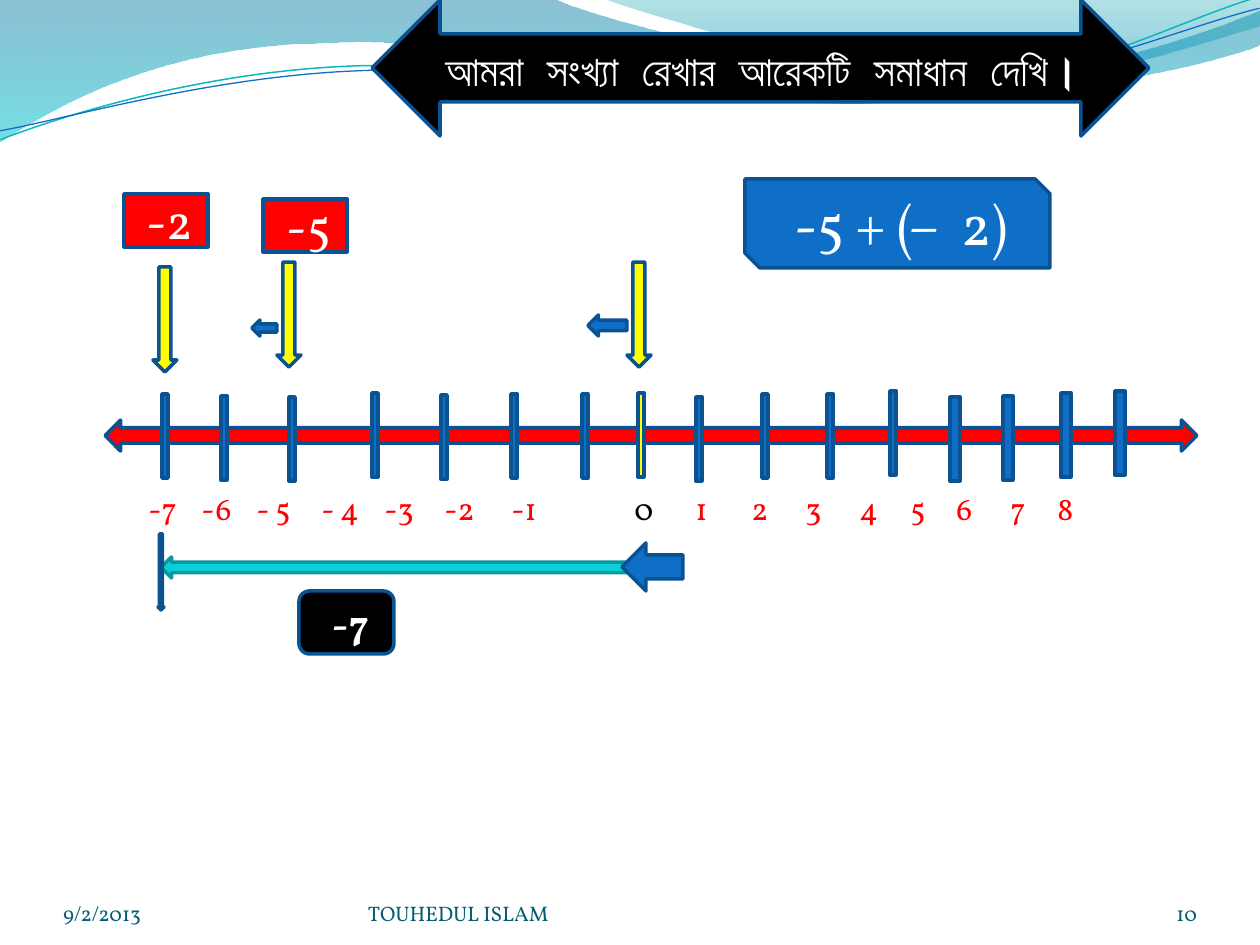
from lxml import etree
from pptx import Presentation
from pptx import util as u
from pptx.dml.color import RGBColor
from pptx.enum import shapes, text
from pptx.oxml.ns import qn

SCALE = 914400 / 126  # EMU in one px
FONT, BANGLA_FONT = "Vollkorn", "Roboto"

WHITE = RGBColor(0xFF, 0xFF, 0xFF)
BLACK = RGBColor(0, 0, 0)
RED = RGBColor(0xFF, 0, 0)
YELLOW = RGBColor(0xFF, 0xFF, 0)
BLUE = RGBColor(0x0F, 0x6F, 0xC6)
OUTLINE = RGBColor(0x0B, 0x52, 0x92)
CYAN = RGBColor(0x0B, 0xD0, 0xD9)
CYAN_OUTLINE = RGBColor(0x08, 0x9A, 0xA1)
FOOTER = RGBColor(0x04, 0x5D, 0x75)
WAVE_TEAL = RGBColor(0x0A, 0xB8, 0xBF)
WAVE_DEEP = RGBColor(0x00, 0x74, 0xA1)
WAVE_AQUA = RGBColor(0x00, 0xC6, 0xCF)
WAVE_GREEN = RGBColor(0x00, 0xA1, 0xA9)
WAVE_SKY = RGBColor(0x00, 0x8B, 0xBF)

KIND = shapes.MSO_SHAPE
ALIGN = text.PP_ALIGN
ANCHOR = text.MSO_ANCHOR


def px(value):
    return u.Emu(round(value * SCALE))


def add_run(paragraph, words, size, color, bold=None, font=FONT):
    run = paragraph.add_run()
    run.text = words
    run.font.name, run.font.size, run.font.bold = font, u.Pt(size), bold
    run.font.color.rgb = color


def add_shape(slide, kind, box, fill, line=OUTLINE):
    shape = slide.shapes.add_shape(kind, *map(px, box))
    shape.shadow.inherit = False
    shape.fill.solid()
    shape.fill.fore_color.rgb = fill
    shape.line.color.rgb = line
    shape.line.width = u.Pt(2)
    return shape


def add_card(slide, kind, box, fill, words, size, bold=None, font=FONT, shift=(7, 0)):
    """A filled shape with one centred line of white text, its margins grown by shift."""
    frame = add_shape(slide, kind, box, fill).text_frame
    frame.word_wrap = True
    frame.vertical_anchor = ANCHOR.MIDDLE
    frame.margin_left, frame.margin_top = px(13 + shift[0]), px(6 + shift[1])
    paragraph = frame.paragraphs[0]
    paragraph.alignment = ALIGN.CENTER
    add_run(paragraph, words, size, WHITE, bold, font)


def add_text(slide, box, words, size, color, align=ALIGN.LEFT, inset=None, anchor=ANCHOR.TOP, tabs=()):
    frame = slide.shapes.add_textbox(*map(px, box)).text_frame
    frame.word_wrap = True
    frame.vertical_anchor = anchor
    if inset is not None:
        frame.margin_left = frame.margin_right = px(inset)
        frame.margin_top = frame.margin_bottom = px(inset)
    paragraph = frame.paragraphs[0]
    paragraph.alignment = align
    if tabs:
        tab_list = etree.SubElement(paragraph._p.get_or_add_pPr(), qn("a:tabLst"))
        for position in tabs:
            etree.SubElement(tab_list, qn("a:tab"), pos=str(px(position)), algn="l")
    add_run(paragraph, words, size, color)


def add_wave(slide, left, top, start, segments, close):
    """An outline of segments: one point is a straight line, three a Bezier curve."""
    builder = slide.shapes.build_freeform(px(left + start[0]), px(top + start[1]))
    points = [point for segment in segments for point in segment]
    builder.add_line_segments([(px(left + x), px(top + y)) for x, y in points], close=close)
    shape = builder.convert_to_shape()
    shape.shadow.inherit = False
    # Join each three line steps of a curve into one Bezier element
    steps = iter(list(shape._element.spPr.iter(qn("a:lnTo"))))
    for segment in segments:
        parts = [next(steps) for _ in segment]
        if len(parts) == 3:
            curve = etree.Element(qn("a:cubicBezTo"))
            parts[0].addprevious(curve)
            for part in parts:
                curve.append(part[0])
                part.getparent().remove(part)
    return shape


def draw_waves(slide, left, top):
    # Filled bands: start, segments, gradient stops (position, colour, opacity)
    bands = [
        ((0, 0), [[(554, -1)], [(600, 21), (837, 79), (955, 79)],
                  [(1075, 79), (1207, 33), (1260, 11)], [(1261, 45)],
                  [(1239, 55), (1096, 96), (940, 95)], [(784, 95), (481, 35), (324, 43)],
                  [(163, 45), (58, 105), (-1, 142)]],
         [(0, WAVE_DEEP, 45), (1, WAVE_AQUA, 55)]),
        ((604, -1), [[(641, 14), (859, 78), (969, 82)],
                     [(1079, 87), (1211, 40), (1260, 26)], [(1260, 0)]],
         [(0, WAVE_GREEN, 30), (0.8, WAVE_SKY, 45)]),
    ]
    for start, segments, stops in bands:
        shape = add_wave(slide, left, top, start, segments, True)
        shape.line.fill.background()
        shape.fill.gradient()
        shape.fill.gradient_angle = 270
        for stop, (position, color, _) in zip(shape.fill.gradient_stops, stops):
            stop.position, stop.color.rgb = position, color
        colors = list(shape._element.spPr.iter(qn("a:srgbClr")))
        for element, (_, _, opacity) in zip(colors, stops):
            etree.SubElement(element, qn("a:alpha"), val=str(opacity * 1000))

    # Thin lines, tilted a little
    lines = [
        ((-2, 110), [[(58, 90), (199, 52), (350, 53)], [(499, 53), (745, 118), (896, 114)],
                     [(1049, 109), (1184, 45), (1260, 27)]], WAVE_TEAL, 0.85),
        ((-2, 101), [[(57, 94), (207, 57), (357, 58)], [(509, 58), (750, 112), (902, 108)],
                     [(1052, 104), (1188, 52), (1262, 38)]], BLUE, 0.75),
    ]
    for start, segments, color, width in lines:
        shape = add_wave(slide, left, top, start, segments, False)
        shape.rotation = 357.3
        shape.fill.background()
        shape.line.color.rgb = color
        shape.line.width = u.Pt(width)


def draw_footer(slide, left, top):
    for x, width, words, align in [(0, 294, "9/2/2013", ALIGN.LEFT),
                                   (305, 462, "TOUHEDUL ISLAM", ALIGN.LEFT),
                                   (1029, 105, "10", ALIGN.RIGHT)]:
        add_text(slide, (left + x, top, width, 50), words, 12, FOOTER, align, 0, ANCHOR.BOTTOM)


def draw_number_line(slide, left, top):
    add_shape(slide, KIND.LEFT_RIGHT_ARROW, (left, top + 29, 1092, 31), RED)

    # Ticks: x and y inside the region; the eighth one is zero
    ticks = [(57, 3), (116, 5), (184, 6), (267, 2), (336, 4), (406, 3), (477, 3), (533, 2),
             (591, 6), (657, 3), (722, 3), (785, 0), (845, 6), (898, 5), (956, 2), (1010, 0)]
    for index, (x, y) in enumerate(ticks):
        width = 6 if index < 12 else 10
        add_shape(slide, KIND.RECTANGLE, (left + x, top + y, width, 84), YELLOW if index == 7 else BLUE)

    # Numbers, spaced by tab stops
    for x, width, words, color, tabs in [
            (31, 473, "-7\t-6\t- 5\t- 4\t-3\t-2\t-1", RED, (53, 108, 173, 236, 296, 363)),
            (578, 473, "1\t2\t3\t4\t5\t6\t7\t8", RED, (56, 110, 164, 215, 261, 315, 362)),
            (517, 44, "0", BLACK, ())]:
        add_text(slide, (left + x, top + 92, width, 50), words, 18, color, tabs=tabs)


def draw_markers(slide, left, top):
    for x, y in [(503, 68), (153, 68), (29, 73)]:
        add_shape(slide, KIND.DOWN_ARROW, (left + x, top + y, 24, 105), YELLOW)
    for x, y, width, height in [(464, 121, 39, 21), (128, 126, 25, 16)]:
        add_shape(slide, KIND.LEFT_ARROW, (left + x, top + y, width, height), BLUE)
    for x, y, words in [(139, 5, "-5"), (0, 0, "-2")]:
        add_card(slide, KIND.RECTANGLE, (left + x, top + y, 84, 53), RED, words, 28)


def draw_result(slide, left, top):
    add_shape(slide, KIND.LEFT_ARROW, (left + 3, top + 23, 483, 21), CYAN, CYAN_OUTLINE)
    add_shape(slide, KIND.LEFT_ARROW, (left + 464, top + 9, 61, 48), BLUE)
    add_card(slide, KIND.ROUNDED_RECTANGLE, (left + 141, top + 57, 95, 63), BLACK, "-7", 24, True)
    add_shape(slide, KIND.DOWN_ARROW, (left, top, 6, 76), BLUE)


def draw_headings(slide, left, top):
    add_card(slide, KIND.LEFT_RIGHT_ARROW, (left, top, 777, 136), BLACK,
             "আমরা  সংখ্যা  রেখার  আরেকটি  সমাধান  দেখি।", 24, True, BANGLA_FONT, (0, 3))
    add_card(slide, KIND.SNIP_2_DIAG_RECTANGLE, (left + 373, top + 179, 305, 89), BLUE,
             "-5 + (–  2)", 32)


def main():
    presentation = Presentation()
    presentation.slide_width, presentation.slide_height = px(1260), px(945)
    slide = presentation.slides.add_slide(presentation.slide_layouts[6])
    draw_waves(slide, 0, 0)
    draw_footer(slide, 63, 876)
    draw_number_line(slide, 105, 391)
    draw_markers(slide, 124, 194)
    draw_result(slide, 158, 534)
    draw_headings(slide, 372, 0)
    presentation.save("out.pptx")


if __name__ == "__main__":
    main()
